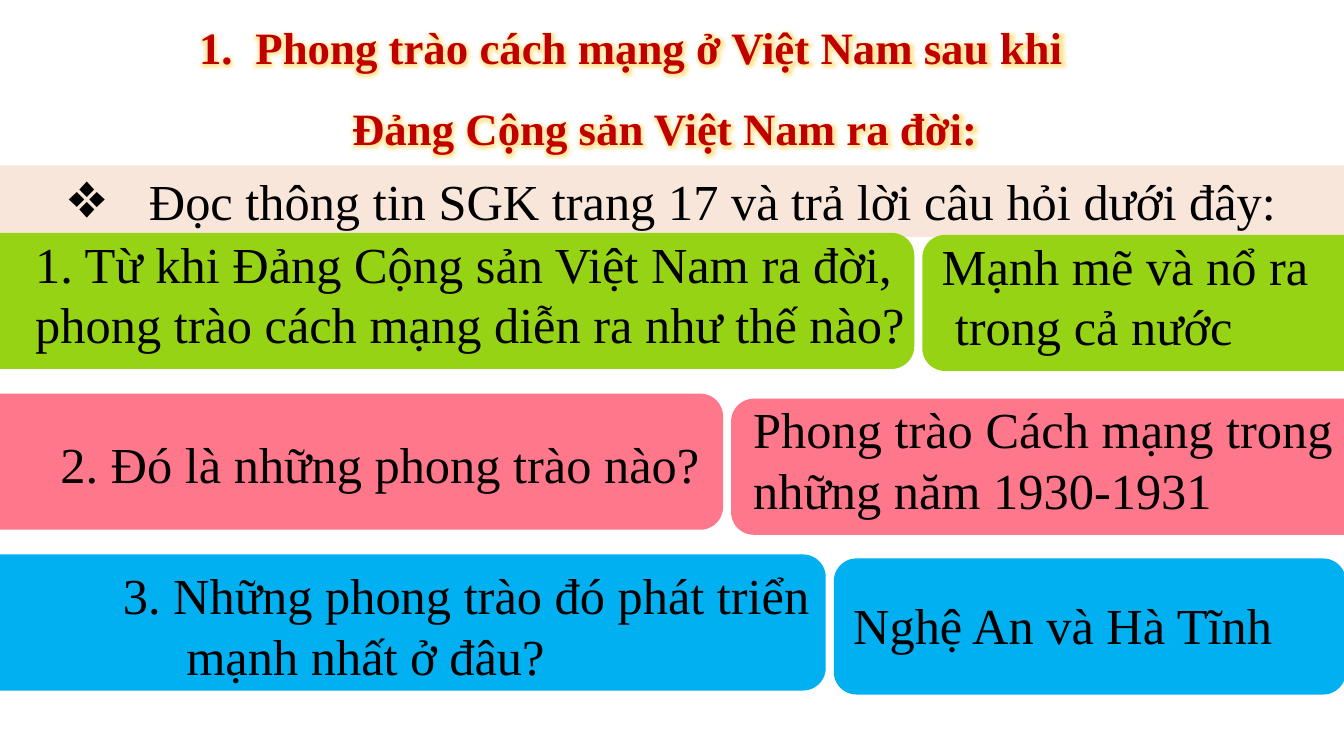
from dataclasses import dataclass

from lxml import etree
from pptx import Presentation
from pptx import util as u
from pptx.dml.color import RGBColor
from pptx.enum import shapes, text
from pptx.oxml.ns import qn

FONT = "Times New Roman"
BLACK = RGBColor(0x00, 0x00, 0x00)
RED = RGBColor(0xC0, 0x00, 0x00)
CREAM = RGBColor(0xF8, 0xE6, 0xDA)
GREEN = RGBColor(0x96, 0xD3, 0x14)
PINK = RGBColor(0xFF, 0x77, 0x8B)
BLUE = RGBColor(0x00, 0xB0, 0xF0)
GLOW = RGBColor(0xFF, 0xC0, 0x00)

WIDTH, HEIGHT = u.Inches(13.33), u.Inches(7.5)

# Shares of the slide, in percent
CARD_WIDTH, CARD_HEIGHT = 70.05, 18
FIRST_ROW, ROW_PITCH = 30.8, 21.27
CARD_GAP = 0.6


@dataclass
class Line:
    words: str
    indent: float = 0  # inches


@dataclass
class Card:
    """A coloured card; text_x is absolute, text_y counts from the row top."""
    left: float
    width: float
    drop: float
    text_x: float
    text_y: float
    text_width: float
    lines: list[Line]


@dataclass
class Row:
    color: RGBColor
    question: Card
    answer: Card


def row(color: RGBColor, edge: float, question: tuple, answer: tuple) -> Row:
    """Place a question card ending at edge and its answer card after the gap."""
    text_x, text_y, text_width, lines = question
    width, drop, answer_x, answer_y, answer_width, answer_lines = answer
    left = edge + CARD_GAP
    return Row(color,
               Card(edge - CARD_WIDTH, CARD_WIDTH, 0, text_x, text_y, text_width, lines),
               Card(left, width, drop, left + answer_x, answer_y, answer_width, answer_lines))


ROWS = [
    row(GREEN, 68.03,
        (1.88, -0.67, 67, [Line("1. Từ khi Đảng Cộng sản Việt Nam ra đời,"),
                           Line("phong trào cách mạng diễn ra như thế nào?")]),
        (38.1, 0.27, 0.7, -0.4, 36.46, [Line("Mạnh mẽ và nổ ra"),
                                        Line("trong cả nước", 0.13)])),
    row(PINK, 53.8,
        (3.75, 4.5, 50.64, [Line("2. Đó là những phong trào nào?")]),
        (49.6, 0.67, 0.9, 0, 55.66, [Line("Phong trào Cách mạng trong"),
                                     Line("những năm 1930-1931")])),
    row(BLUE, 61.44,
        (8.4, 0.67, 53.26, [Line("3. Những phong trào đó phát triển"),
                            Line("mạnh nhất ở đâu?", 0.63)]),
        (38.1, 0.53, 0.7, 4.53, 36.46, [Line("Nghệ An và Hà Tĩnh")])),
]


def area(left: float, top: float, width: float, height: float) -> tuple:
    """Turn percentages of the slide into lengths."""
    return (u.Emu(int(WIDTH * left / 100)), u.Emu(int(HEIGHT * top / 100)),
            u.Emu(int(WIDTH * width / 100)), u.Emu(int(HEIGHT * height / 100)))


def move(shape, left: float, top: float, width: float, height: float) -> None:
    shape.left, shape.top, shape.width, shape.height = area(left, top, width, height)


def set_lines(shape, lines: list[str], size: int, color: RGBColor,
              bold: bool = False) -> list:
    frame = shape.text_frame
    frame.word_wrap = True
    frame.auto_size = text.MSO_AUTO_SIZE.NONE
    frame.vertical_anchor = text.MSO_ANCHOR.TOP
    frame.text = "\n".join(lines)
    for para in frame.paragraphs:
        para.space_before = u.Pt(0)
        for span in para.runs:
            span.font.name, span.font.size = FONT, u.Pt(size)
            span.font.bold, span.font.color.rgb = bold, color
    return list(frame.paragraphs)


def set_indent(para, margin: float, hanging: float = 0) -> None:
    props = para._p.get_or_add_pPr()
    props.set("marL", str(u.Inches(margin)))
    props.set("indent", str(-u.Inches(hanging)))


def set_bullet(para, tag: str, **attributes: str) -> None:
    props = para._p.get_or_add_pPr()
    if tag != "a:buNone":
        etree.SubElement(props, qn("a:buFont"), typeface=FONT)
    etree.SubElement(props, qn(tag), **attributes)


def add_glow(span) -> None:
    effects = etree.Element(qn("a:effectLst"))
    glow = etree.SubElement(effects, qn("a:glow"), rad=str(u.Pt(8)))
    color = etree.SubElement(glow, qn("a:srgbClr"), val=str(GLOW))
    etree.SubElement(color, qn("a:alpha"), val="40000")
    span.font._element.find(qn("a:solidFill")).addnext(effects)


def fill_title(title) -> None:
    move(title, -2.63, 2, 100, 18)
    first, second = set_lines(title, ["Phong trào cách mạng ở Việt Nam sau khi ",
                                      "Đảng Cộng sản Việt Nam ra đời:"], 32, RED, True)
    set_indent(first, 0.56, 0.56)
    set_bullet(first, "a:buAutoNum", type="arabicPeriod")
    set_indent(second, 0.56)
    set_bullet(second, "a:buNone")
    second.line_spacing = 1.5
    for para in (first, second):
        para.alignment = text.PP_ALIGN.CENTER
        add_glow(para.runs[0])


def fill_prompt(prompt) -> None:
    move(prompt, 0, 21.87, 100, 9.47)
    prompt.fill.solid()
    prompt.fill.fore_color.rgb = CREAM
    para = set_lines(prompt, ["Đọc thông tin SGK trang 17 và trả lời câu hỏi dưới đây:"],
                     36, BLACK)[0]
    set_indent(para, 0.81, 0.81)
    set_bullet(para, "a:buChar", char="❖")
    para.alignment = text.PP_ALIGN.CENTER


def add_card(page, card: Card, color: RGBColor, top: float) -> None:
    panel = page.shapes.add_shape(
        shapes.MSO_SHAPE.ROUNDED_RECTANGLE,
        *area(card.left, top + card.drop, card.width, CARD_HEIGHT))
    panel.shadow.inherit = False
    panel.fill.solid()
    panel.fill.fore_color.rgb = color
    panel.line.fill.background()
    box = page.shapes.add_textbox(*area(card.text_x, top + card.text_y, card.text_width,
                                        1.47 + 8 * len(card.lines)))
    paras = set_lines(box, [line.words for line in card.lines], 36, BLACK)
    for para, line in zip(paras, card.lines):
        set_indent(para, line.indent)


def main() -> None:
    deck = Presentation()
    deck.slide_width, deck.slide_height = WIDTH, HEIGHT
    page = deck.slides.add_slide(deck.slide_layouts[1])

    # Heading and reading prompt
    fill_title(page.shapes.title)
    fill_prompt(page.placeholders[1])

    # Question and answer rows
    for index, entry in enumerate(ROWS):
        top = FIRST_ROW + index * ROW_PITCH
        for card in (entry.question, entry.answer):
            add_card(page, card, entry.color, top)

    deck.save("out.pptx")


if __name__ == "__main__":
    main()
